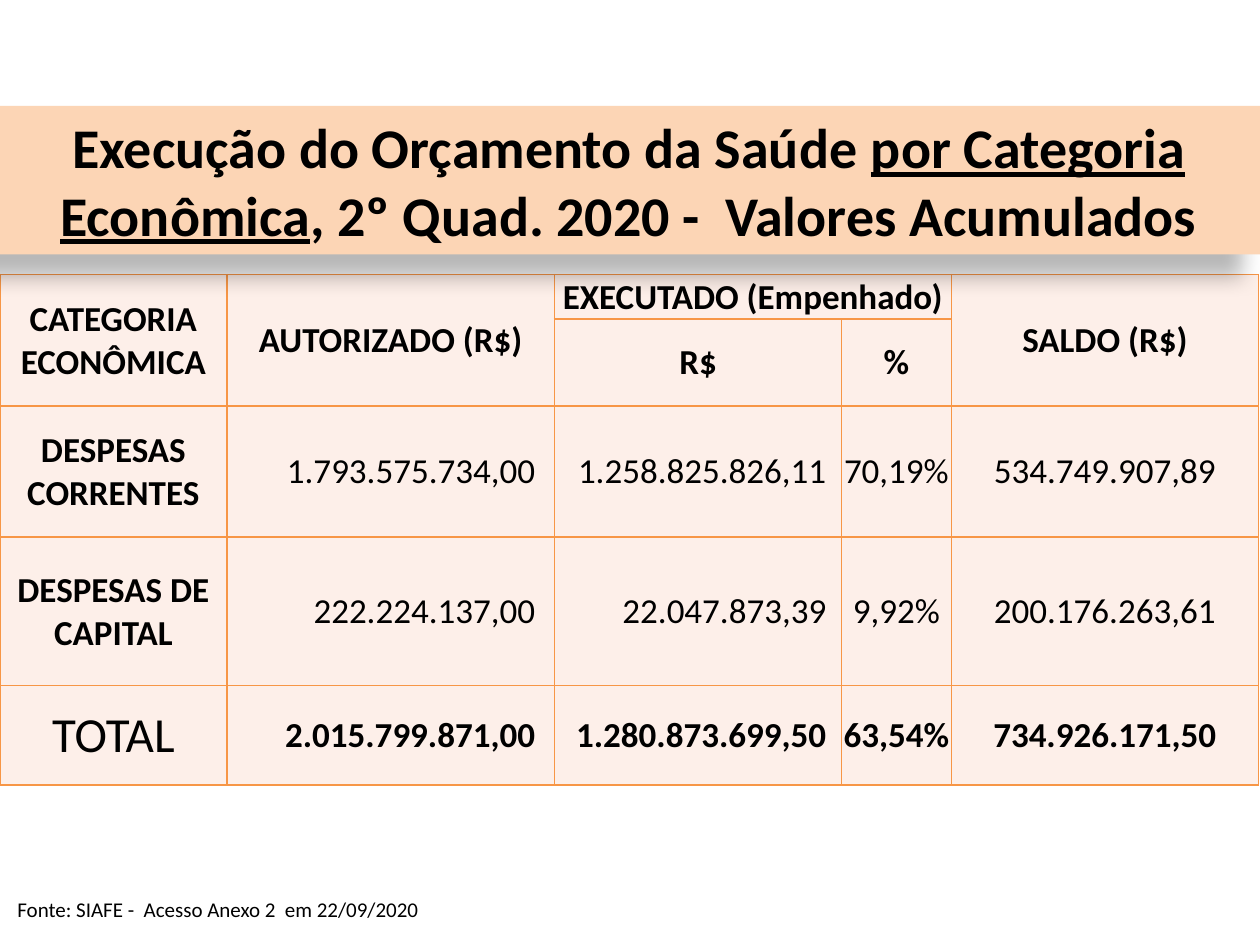
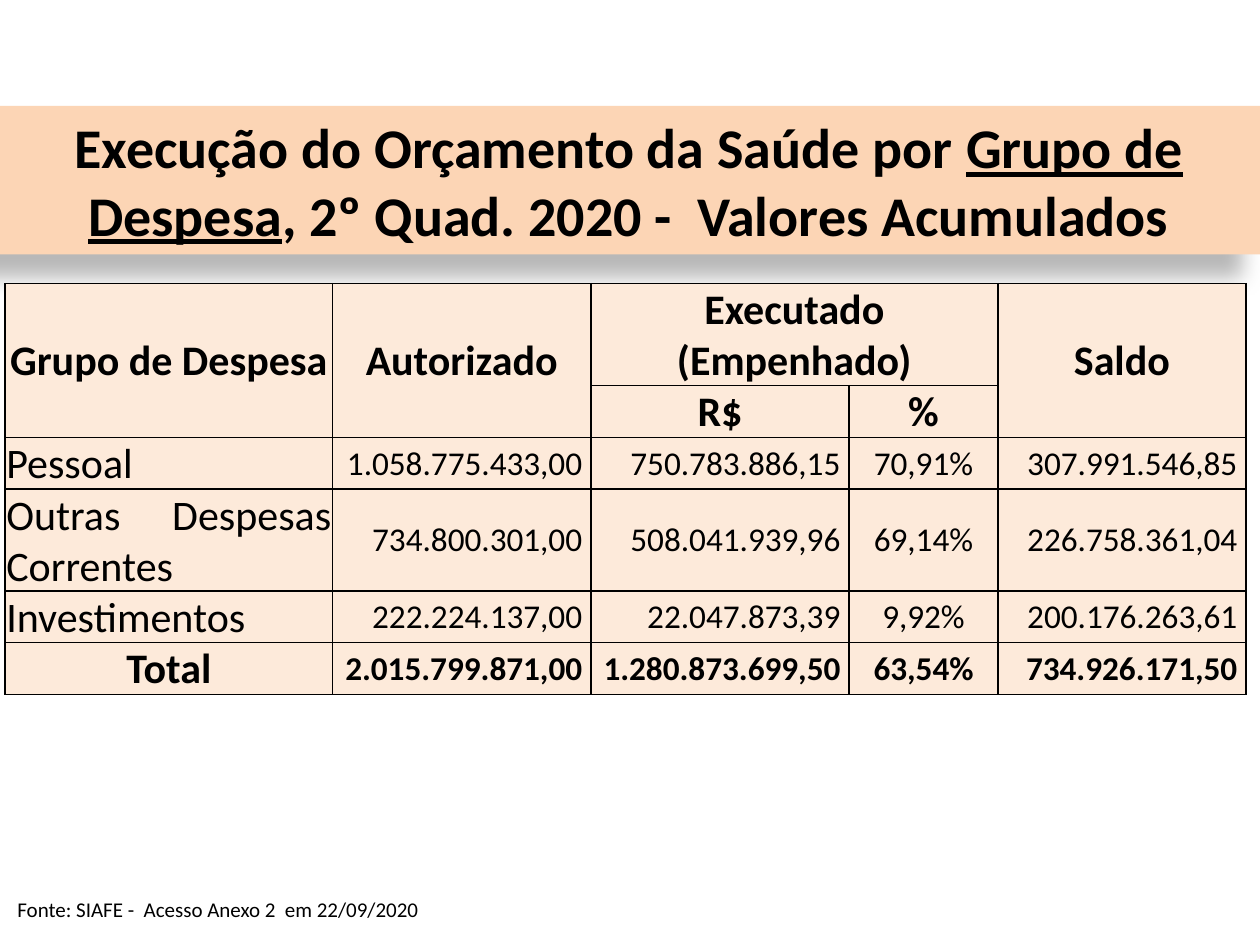
from lxml import etree
from pptx import Presentation
from pptx.dml.color import RGBColor
from pptx.enum.text import MSO_ANCHOR, MSO_AUTO_SIZE, PP_ALIGN as Align
from pptx.oxml import parse_xml
from pptx.oxml.ns import nsdecls, qn
from pptx.util import Inches, Pt

FONT = "Calibri"
COLOURS = {
    "text": "000000",
    "band": "FCD5B5",
    "category_fill": "FDEFE9",
    "category_line": "F79646",
    "group_fill": "FDEADA",
    "group_line": "000000",
}
SOURCE = "Fonte: SIAFE -  Acesso Anexo 2  em 22/09/2020"
LEFT, CENTRE, RIGHT, JUSTIFY = Align.LEFT, Align.CENTER, Align.RIGHT, Align.JUSTIFY


def rgb(name):
    return RGBColor.from_string(COLOURS[name])


class BudgetDeck:
    """Holds the shared style and the slide being built."""

    def __init__(self):
        self.deck = Presentation()
        self.deck.slide_width, self.deck.slide_height = Inches(10), Inches(7.5)
        self.slide = None

    def new_slide(self):
        self.slide = self.deck.slides.add_slide(self.deck.slide_layouts[5])

    def style(self, paragraph, size, bold=False, align=LEFT):
        paragraph.alignment = align
        font = paragraph.font
        font.name, font.size, font.bold = FONT, Pt(size), bold
        font.color.rgb = rgb("text")

    def title(self, before, underlined, after):
        band = self.slide.shapes.title
        band.left, band.top = Inches(-0.07), Inches(0.84)
        band.width, band.height = Inches(10.12), Inches(1.18)
        band.fill.solid()
        band.fill.fore_color.rgb = rgb("band")
        band.line.fill.background()
        band._element.spPr.append(parse_xml(
            f'<a:effectLst {nsdecls("a")}><a:outerShdw blurRad="{Pt(11.8)}" '
            f'dist="{Pt(19.7)}" dir="{141 * 60000}" algn="tl" rotWithShape="0">'
            f'<a:srgbClr val="{COLOURS["text"]}"><a:alpha val="28000"/></a:srgbClr>'
            '</a:outerShdw></a:effectLst>'))
        frame = band.text_frame
        frame.word_wrap, frame.auto_size = True, MSO_AUTO_SIZE.NONE
        frame.vertical_anchor = MSO_ANCHOR.MIDDLE
        heading = frame.paragraphs[0]
        self.style(heading, 32, True, CENTRE)
        for text in (before, underlined, after):
            run = heading.add_run()
            run.text = text
            run.font.underline = text == underlined
        self.slide.shapes._spTree.append(band._element)

    def source(self):
        box = self.slide.shapes.add_textbox(
            Inches(0.04), Inches(7.07), Inches(3.44), Inches(0.3))
        box.text_frame.word_wrap = False
        note = box.text_frame.paragraphs[0]
        note.text = SOURCE
        self.style(note, 12)

    def border(self, cell, colour):
        properties = cell._tc.get_or_add_tcPr()
        for side in ("lnL", "lnR", "lnT", "lnB"):
            line = etree.SubElement(properties, qn(f"a:{side}"), w=str(Pt(1)))
            fill = etree.SubElement(line, qn("a:solidFill"))
            etree.SubElement(fill, qn("a:srgbClr"), val=COLOURS[colour])

    def table(self, left, top, widths, heights, rows, palette,
              label_size, value_size, aligns, insets, bold_labels):
        grid = self.slide.shapes.add_table(
            len(rows), len(widths), Inches(left), Inches(top),
            Inches(sum(widths)), Inches(sum(heights))).table
        grid.first_row = grid.horz_banding = False
        for column, width in zip(grid.columns, widths):
            column.width = Inches(width)
        for row, height in zip(grid.rows, heights):
            row.height = Inches(height)
        for r, texts in enumerate(rows):
            header, total = r < 2, r == len(rows) - 1
            for c, text in enumerate(texts):
                cell = grid.cell(r, c)
                self.border(cell, f"{palette}_line")
                cell.fill.solid()
                cell.fill.fore_color.rgb = rgb(f"{palette}_fill")
                cell.vertical_anchor = MSO_ANCHOR.MIDDLE
                cell.margin_left = cell.margin_top = Inches(0.01)
                cell.margin_right = Inches(0.01 if header else insets[c])
                cell.margin_bottom = 0
                cell.text = text
                self.style(cell.text_frame.paragraphs[0],
                           label_size if header or c == 0 else value_size,
                           header or total or (c == 0 and bold_labels),
                           CENTRE if header else aligns[c])
        for c in (0, 1, 4):
            grid.cell(0, c).merge(grid.cell(1, c))
        grid.cell(0, 2).merge(grid.cell(0, 3))
        return grid

    def save(self):
        self.deck.save("out.pptx")


def category_slide(deck):
    deck.new_slide()
    rows = [
        ("CATEGORIA ECONÔMICA", "AUTORIZADO (R$)", "EXECUTADO (Empenhado)", "", "SALDO (R$)"),
        ("", "", "R$", "%", ""),
        ("DESPESAS CORRENTES", "1.793.575.734,00", "1.258.825.826,11", "70,19%", "534.749.907,89"),
        ("DESPESAS DE CAPITAL", "222.224.137,00", "22.047.873,39", "9,92%", "200.176.263,61"),
        ("TOTAL", "2.015.799.871,00", "1.280.873.699,50", "63,54%", "734.926.171,50"),
    ]
    categories = deck.table(
        0, 2.18, (1.8, 2.6, 2.28, 0.87, 2.44), (0.34, 0.68, 1.04, 1.18, 0.79),
        rows, "category", 20, 20, (CENTRE, RIGHT, RIGHT, CENTRE, CENTRE),
        (0.01, 0.15, 0.12, 0.01, 0.01), bold_labels=True)
    deck.style(categories.cell(4, 0).text_frame.paragraphs[0], 28, False, CENTRE)
    deck.title("Execução do Orçamento da Saúde ", "por Categoria Econômica",
               ", 2º Quad. 2020 -  Valores Acumulados")
    deck.source()


def group_slide(deck):
    deck.new_slide()
    deck.title("Execução do Orçamento da Saúde por ", "Grupo de Despesa",
               ", 2º Quad. 2020 -  Valores Acumulados")
    deck.source()
    rows = [
        ("Grupo de Despesa", "Autorizado", "Executado (Empenhado)", "", "Saldo"),
        ("", "", "R$", "%", ""),
        ("Pessoal", "1.058.775.433,00", "750.783.886,15", "70,91%", "307.991.546,85"),
        ("Outras Despesas Correntes", "734.800.301,00", "508.041.939,96", "69,14%",
         "226.758.361,04"),
        ("Investimentos", "222.224.137,00", "22.047.873,39", "9,92%", "200.176.263,61"),
        ("Total", "2.015.799.871,00", "1.280.873.699,50", "63,54%", "734.926.171,50"),
    ]
    groups = deck.table(
        0.04, 2.25, (2.6, 2.05, 2.05, 1.18, 1.97), (0.81, 0.41, 0.41, 0.81, 0.41, 0.41),
        rows, "group", 24, 19, (JUSTIFY, RIGHT, RIGHT, CENTRE, RIGHT),
        (0.01, 0.07, 0.07, 0.01, 0.07), bold_labels=False)
    groups.cell(5, 0).text_frame.paragraphs[0].alignment = CENTRE


def main():
    deck = BudgetDeck()
    category_slide(deck)
    group_slide(deck)
    deck.save()


if __name__ == "__main__":
    main()
